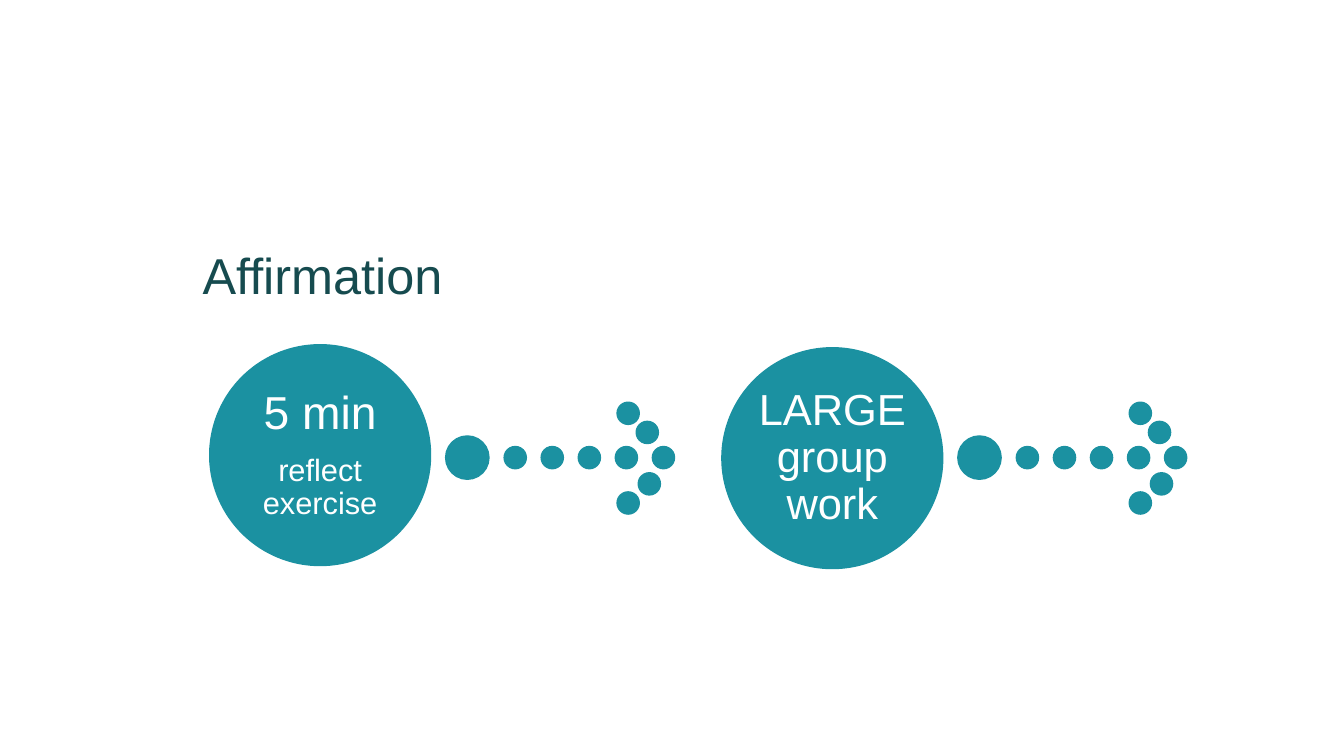
import pptx
import pptx.dml.color
import pptx.enum.shapes
import pptx.enum.text
import pptx.util

EMU_PER_PX = 9144  # 100 px to the inch
COLORS = {"teal": "1B91A1", "dark_teal": "164B4F", "white": "FFFFFF"}
FONT = "Arial"

CIRCLE_SIZE = 219
DOT_SIZE = 22
LEAD_DOT_SIZE = 43
SHAFT_START, SHAFT_LENGTH, SHAFT_DOTS = 58, 147, 5
HEAD_DOTS = [(170, -55), (189, -36), (191, 15), (170, 34)]  # left, top from the axis


def px(length):
    return pptx.util.Emu(round(length * EMU_PER_PX))


def color(name):
    return pptx.dml.color.RGBColor.from_string(COLORS[name])


def write_paragraph(paragraph, text, *, size, color_name, align, space_after=0):
    paragraph.text = text
    paragraph.alignment = align
    paragraph.line_spacing = 0.9
    paragraph.space_before = pptx.util.Pt(0)
    paragraph.space_after = pptx.util.Pt(space_after)
    font = paragraph.runs[0].font
    font.name = FONT
    font.size = pptx.util.Pt(size)
    font.color.rgb = color(color_name)


def add_circle(slide, left, top, size):
    circle = slide.shapes.add_shape(
        pptx.enum.shapes.MSO_SHAPE.OVAL, px(left), px(top), px(size), px(size))
    circle.shadow.inherit = False
    circle.fill.solid()
    circle.fill.fore_color.rgb = color("teal")
    circle.line.color.rgb = color("teal")
    circle.line.width = pptx.util.Pt(1)
    return circle


def add_title(slide, text, left, top, width, height):
    title = slide.shapes.title
    title.left, title.top, title.width, title.height = map(px, (left, top, width, height))
    title.text_frame.vertical_anchor = pptx.enum.text.MSO_ANCHOR.BOTTOM
    write_paragraph(title.text_frame.paragraphs[0], text, size=36,
                    color_name="dark_teal", align=pptx.enum.text.PP_ALIGN.LEFT)


def add_dotted_arrow(slide, left, axis):
    """Draw a right-pointing arrow of dots centred on the height of the axis."""
    add_circle(slide, left, axis - LEAD_DOT_SIZE / 2, LEAD_DOT_SIZE)
    pitch = SHAFT_LENGTH / (SHAFT_DOTS - 1)
    for index in range(SHAFT_DOTS):
        add_circle(slide, left + SHAFT_START + index * pitch, axis - DOT_SIZE / 2, DOT_SIZE)
    for dot_left, dot_top in HEAD_DOTS:
        add_circle(slide, left + dot_left, axis + dot_top, DOT_SIZE)


def add_step(slide, left, top, lines, margin):
    """Draw a circle with its lines of (text, point size)."""
    circle = add_circle(slide, left, top, CIRCLE_SIZE)
    frame = circle.text_frame
    frame.word_wrap = True
    frame.vertical_anchor = pptx.enum.text.MSO_ANCHOR.MIDDLE
    frame.margin_left = frame.margin_right = px(margin)
    frame.margin_top = frame.margin_bottom = px(margin)
    for index, (text, size) in enumerate(lines):
        paragraph = frame.add_paragraph() if index else frame.paragraphs[0]
        is_last = index == len(lines) - 1
        write_paragraph(paragraph, text, size=size, color_name="white",
                        align=pptx.enum.text.PP_ALIGN.CENTER,
                        space_after=0 if is_last else 11)


def main():
    presentation = pptx.Presentation()
    presentation.slide_width, presentation.slide_height = px(1333), px(750)
    slide = presentation.slides.add_slide(presentation.slide_layouts.get_by_name("Title Only"))
    slide.background.fill.solid()
    slide.background.fill.fore_color.rgb = color("white")

    add_title(slide, "Affirmation", 191, 183, 1050, 125)
    steps = [
        (208, 342, [("5 min", 33), ("reflect exercise", 22)], 5),
        (716, 345, [("LARGE group work", 31)], 4),
    ]
    for left, top, lines, margin in steps:
        add_dotted_arrow(slide, left + 234, 454)
        add_step(slide, left, top, lines, margin)
    presentation.save("out.pptx")


if __name__ == "__main__":
    main()
